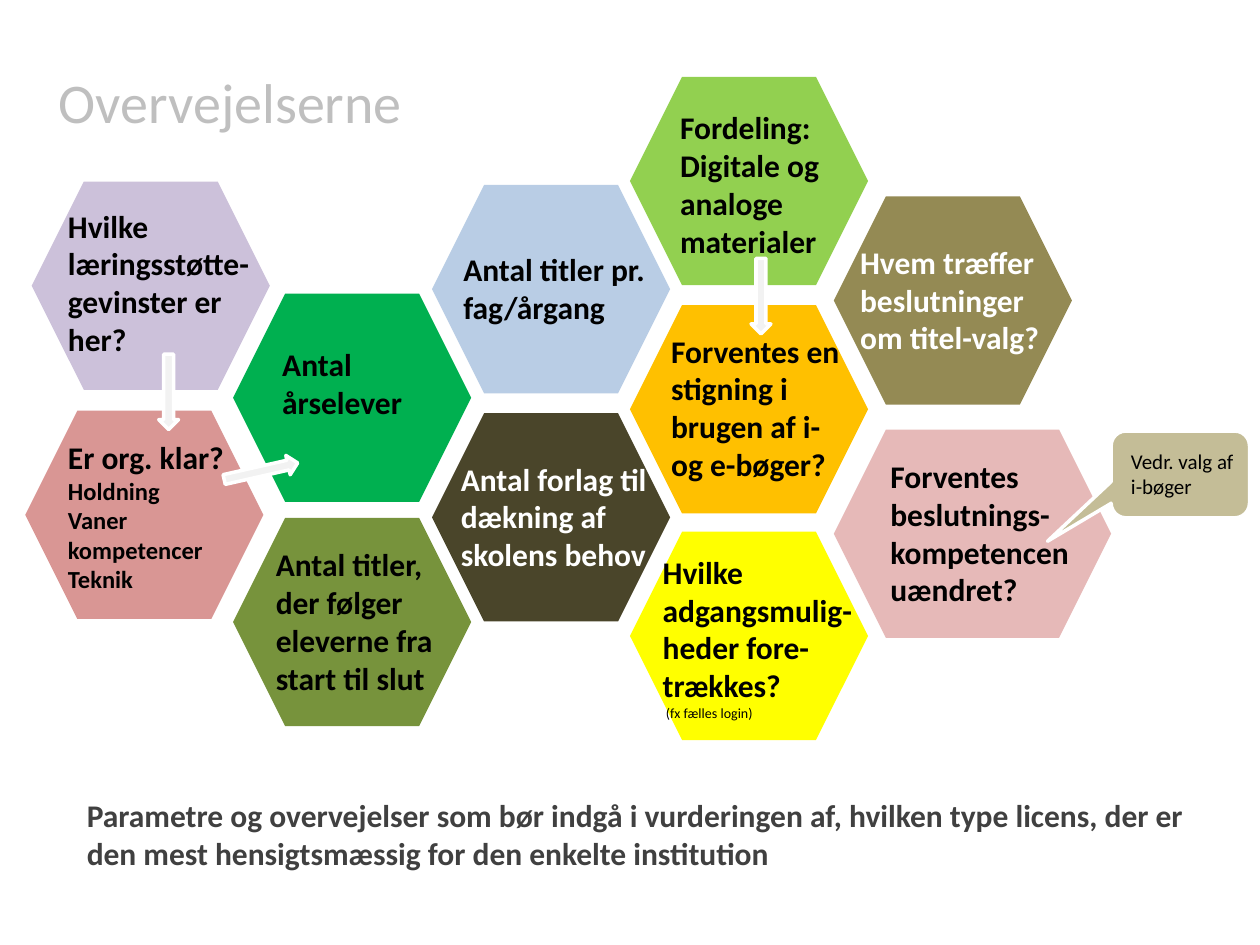
import pptx
import pptx.util
import pptx.dml.color
import pptx.enum.shapes
import pptx.enum.text
from dataclasses import dataclass

Cm = pptx.util.Cm
RGB = pptx.dml.color.RGBColor
SHAPE = pptx.enum.shapes.MSO_SHAPE

FONT = "Calibri"
BLACK = RGB(0, 0, 0)
WHITE = RGB(255, 255, 255)
TITLE_GREY = RGB(0xBF, 0xBF, 0xBF)
TEXT_GREY = RGB(0x40, 0x40, 0x40)
ARROW_GREY = RGB(0xF2, 0xF2, 0xF2)
LILAC = RGB(0xCC, 0xC1, 0xDA)
ROSE = RGB(0xD9, 0x96, 0x94)
GREEN = RGB(0x00, 0xB0, 0x50)
MOSS = RGB(0x77, 0x93, 0x3C)
BLUE = RGB(0xB9, 0xCD, 0xE5)
BROWN = RGB(0x4A, 0x45, 0x2A)
LIME = RGB(0x92, 0xD0, 0x50)
ORANGE = RGB(0xFF, 0xC0, 0x00)
YELLOW = RGB(0xFF, 0xFF, 0x00)
KHAKI = RGB(0x94, 0x8A, 0x54)
PINK = RGB(0xE6, 0xB9, 0xB8)
SAND = RGB(0xC4, 0xBD, 0x97)


@dataclass
class Box:
    """A rectangle in centimetres."""
    left: float
    top: float
    width: float
    height: float

    def inside(self, dx, dy, width, height):
        return Box(self.left + dx, self.top + dy, width, height)

    def lengths(self):
        return Cm(self.left), Cm(self.top), Cm(self.width), Cm(self.height)


# Left edges of the cell columns and the common cell size
COL_1, COL_2, COL_3, COL_4, COL_5 = 0.64, 4.7, 8.71, 12.7, 16.81
CELL_WIDTH, CELL_HEIGHT = 4.8, 4.2

# Left, top, width, fill, text colour, text box within the cell,
# paragraphs, each a list of (text, size)
CELLS = [
    (COL_1, 3.66, CELL_WIDTH, LILAC, BLACK, (0.48, 0.38, 4.57, 3.33),
     [[("Hvilke", 18)], [("læringsstøtte- gevinster er her?", 18)]]),
    (COL_1 - 0.13, 8.28, CELL_WIDTH, ROSE, BLACK, (0.61, 0.43, 4.57, 3.43),
     [[("Er org. klar? ", 18), ("Holdning", 14)], [("Vaner", 14)],
      [("kompetencer", 14)], [("Teknik", 14)]]),
    (COL_2, 5.92, CELL_WIDTH, GREEN, BLACK, (0.74, 0.91, 3.2, 1.8),
     [[("Antal årselever", 18)]]),
    (COL_2, 10.44, CELL_WIDTH, MOSS, BLACK, (0.61, 0.43, 4.19, 3.33),
     [[("Antal titler, der følger eleverne fra start til slut", 18)]]),
    (COL_3, 3.73, CELL_WIDTH, BLUE, BLACK, (0.38, 1.19, 4.19, 1.8),
     [[("Antal titler pr. fag/årgang", 18)]]),
    (COL_3, 8.33, CELL_WIDTH, BROWN, WHITE, (0.33, 0.81, 4.6, 2.57),
     [[("Antal forlag til dækning af skolens behov", 18)]]),
    (COL_4, 1.55, CELL_WIDTH, LIME, BLACK, (0.76, 0.51, 3.4, 3.33),
     [[("Fordeling: Digitale og analoge materialer", 18)]]),
    (COL_4, 6.15, CELL_WIDTH, ORANGE, BLACK, (0.58, 0.41, 4.19, 3.33),
     [[("Forventes en stigning i brugen af i- og e-bøger?", 18)]]),
    (COL_4, 10.72, CELL_WIDTH, YELLOW, BLACK, (0.41, 0.3, 4.39, 3.68),
     [[("Hvilke adgangsmulig-heder fore-trækkes?", 18)], [(" (fx fælles login)", 8)]]),
    (COL_5, 3.96, CELL_WIDTH, KHAKI, WHITE, (0.28, 0.81, 4.24, 2.57),
     [[("Hvem træffer beslutninger om titel-valg?", 18)]]),
    (COL_5, 8.66, 5.59, PINK, BLACK, (0.89, 0.43, 4.37, 3.33),
     [[("Forventes beslutnings-kompetencen uændret?", 18)]]),
]

# Arrow positions before rotation, with the angle
ARROW_SIZE = (1.52, 0.4)
ARROWS = [(2.64, 7.7, 90), (14.58, 5.77, 90), (4.5, 9.3, 347.3)]


def style_span(span, size, color, bold):
    span.font.name = FONT
    span.font.size = pptx.util.Pt(size)
    span.font.bold = bold
    span.font.color.rgb = color


def add_text(page, box, paragraphs, color, bold=True):
    frame = page.shapes.add_textbox(*box.lengths()).text_frame
    frame.word_wrap = True
    for index, pieces in enumerate(paragraphs):
        para = frame.paragraphs[0] if index == 0 else frame.add_paragraph()
        for text, size in pieces:
            span = para.add_run()
            span.text = text
            style_span(span, size, color, bold and size > 8)


def add_filled(page, kind, box, fill, outlined=False):
    shape = page.shapes.add_shape(kind, *box.lengths())
    shape.shadow.inherit = False
    shape.fill.solid()
    shape.fill.fore_color.rgb = fill
    if outlined:
        shape.line.color.rgb = WHITE
        shape.line.width = pptx.util.Pt(2)
    else:
        shape.line.fill.background()
    return shape


def place_title(page, box):
    title = page.shapes.title
    title.left, title.top, title.width, title.height = box.lengths()
    frame = title.text_frame
    frame.text = "Overvejelserne"
    frame.vertical_anchor = pptx.enum.text.MSO_ANCHOR.TOP
    para = frame.paragraphs[0]
    para.alignment = pptx.enum.text.PP_ALIGN.LEFT
    style_span(para.runs[0], 32, TITLE_GREY, False)


def place_honeycomb(page, box):
    placed = []
    for left, top, width, fill, color, text_area, paragraphs in CELLS:
        cell = box.inside(left, top, width, CELL_HEIGHT)
        add_filled(page, SHAPE.HEXAGON, cell, fill)
        placed.append((cell.inside(*text_area), paragraphs, color))
    # Text lies above every cell, since some lines run past the edge
    for text_box, paragraphs, color in placed:
        add_text(page, text_box, paragraphs, color)
    for left, top, angle in ARROWS:
        area = box.inside(left, top, *ARROW_SIZE)
        arrow = add_filled(page, SHAPE.RIGHT_ARROW, area, ARROW_GREY, outlined=True)
        arrow.rotation = angle


def place_callout(page, box):
    callout = add_filled(page, SHAPE.ROUNDED_RECTANGULAR_CALLOUT, box, SAND, outlined=True)
    for index, value in enumerate((-0.96, 0.77, 0.17)):
        callout.adjustments[index] = value
    add_text(page, box.inside(0.15, 0.23, box.width, 1.27),
             [[("Vedr. valg af i-bøger", 12)]], BLACK, bold=False)


def place_summary(page, box):
    add_text(page, box, [[("Parametre og overvejelser som bør indgå i vurderingen af, "
                           "hvilken type licens, der er den mest hensigtsmæssig for "
                           "den enkelte institution", 18)]], TEXT_GREY)


def main():
    deck = pptx.Presentation()
    deck.slide_width, deck.slide_height = Cm(25.4), Cm(19.05)
    page = deck.slides.add_slide(deck.slide_layouts[5])
    place_title(page, Box(0.93, 1.24, 11.38, 1.63))
    place_honeycomb(page, Box(0, 0, 25.4, 15))
    place_callout(page, Box(22.4, 8.69, 2.79, 1.75))
    place_summary(page, Box(1.5, 15.93, 22.83, 2.57))
    deck.save("out.pptx")


if __name__ == "__main__":
    main()
